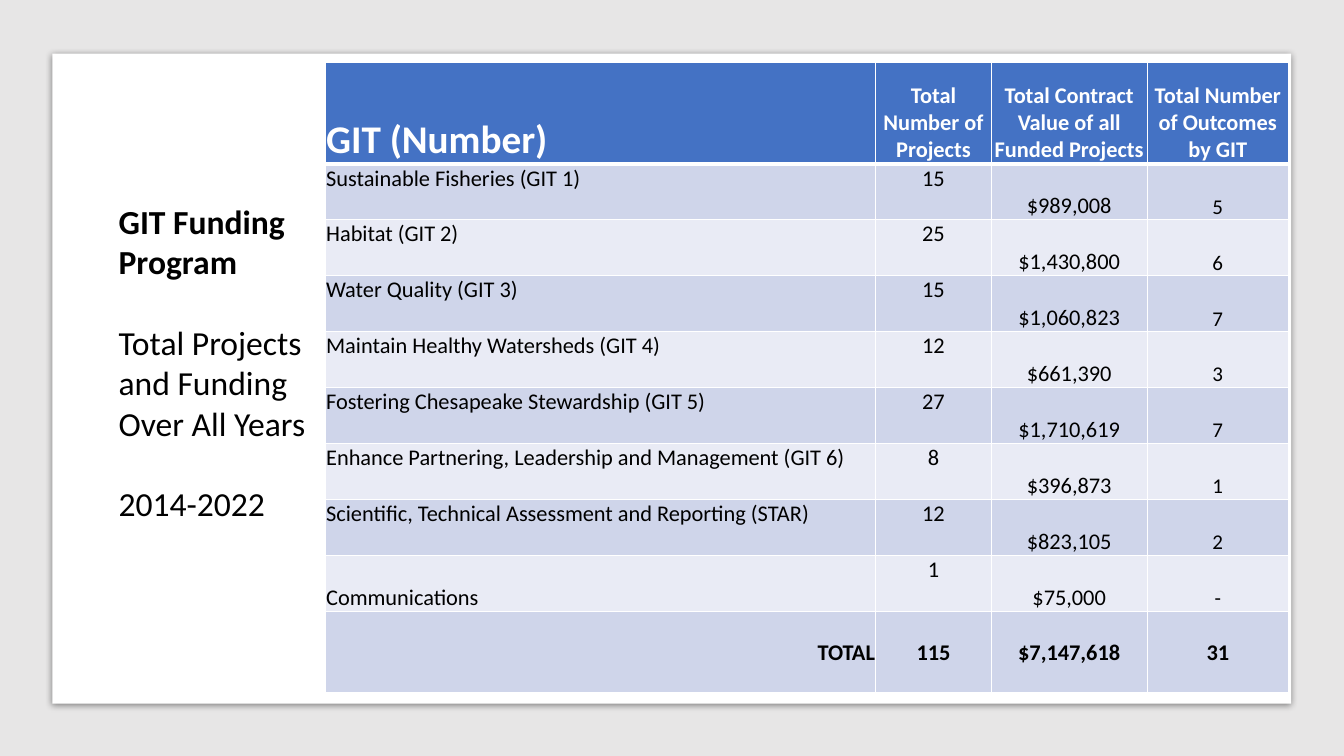
import pptx
import pptx.dml.color
import pptx.enum.shapes
import pptx.enum.text
import pptx.oxml
import pptx.oxml.ns
import pptx.util

Cm, Pt = pptx.util.Cm, pptx.util.Pt
ALIGN = pptx.enum.text.PP_ALIGN
ANCHOR = pptx.enum.text.MSO_ANCHOR

COLORS = {
    "background": "9DC3E6",
    "backdrop": "E7E6E6",
    "white": "FFFFFF",
    "black": "000000",
    "header": "4472C4",
    "band_dark": "CFD5EA",
    "band_light": "E9EBF5",
}
COL_WIDTHS = [13.87, 2.91, 3.93, 3.56]
ROW_HEIGHTS = [2.55] + [1.41] * 8 + [2.05]
HEADERS = ["GIT (Number)", "Total Number of Projects",
           "Total Contract Value of all Funded Projects",
           "Total Number of Outcomes by GIT"]
ROWS = [
    ["Sustainable Fisheries (GIT 1)", "15", "$989,008", "5"],
    ["Habitat (GIT 2)", "25", "$1,430,800", "6"],
    ["Water Quality (GIT 3)", "15", "$1,060,823", "7"],
    ["Maintain Healthy Watersheds (GIT 4)", "12", "$661,390", "3"],
    ["Fostering Chesapeake Stewardship (GIT 5)", "27", "$1,710,619", "7"],
    ["Enhance Partnering, Leadership and Management (GIT 6)", "8", "$396,873", "1"],
    ["Scientific, Technical Assessment and Reporting (STAR)", "12", "$823,105", "2"],
    ["Communications", "1", "$75,000", "-"],
]
TOTALS = ["TOTAL", "115", "$7,147,618", "31"]


class SlideBuilder:
    """Holds the shared style and the slide being filled."""

    font = "Calibri"
    nsdecls = pptx.oxml.ns.nsdecls("a")

    def __init__(self, s):
        self.s = s

    def fill(self, target, color):
        target.fill.solid()
        target.fill.fore_color.rgb = pptx.dml.color.RGBColor.from_string(COLORS[color])

    def style(self, p, size, color="black", bold=False, align=ALIGN.LEFT):
        p.alignment = align
        p.font.name, p.font.size, p.font.bold = self.font, Pt(size), bold
        p.font.color.rgb = pptx.dml.color.RGBColor.from_string(COLORS[color])

    def panel(self, x, y, w, h, color, shadow=False):
        sp = self.s.shapes.add_shape(pptx.enum.shapes.MSO_SHAPE.RECTANGLE,
                                     Cm(x), Cm(y), Cm(w), Cm(h))
        self.fill(sp, color)
        sp.line.fill.background()
        sp.shadow.inherit = False
        if shadow:
            effects = sp.element.spPr.find(pptx.oxml.ns.qn("a:effectLst"))
            effects.append(pptx.oxml.parse_xml(
                f'<a:outerShdw {self.nsdecls} blurRad="{Pt(5)}" dist="{Pt(1.4)}" '
                f'dir="5400000" rotWithShape="0"><a:srgbClr val="{COLORS["black"]}">'
                '<a:alpha val="43000"/></a:srgbClr></a:outerShdw>'))

    def text(self, x, y, w, h, lines, size, gap):
        tf = self.s.shapes.add_textbox(Cm(x), Cm(y), Cm(w), Cm(h)).text_frame
        tf.word_wrap = True
        for i, (line, bold) in enumerate(lines):
            p = tf.add_paragraph() if i else tf.paragraphs[0]
            p.text = line
            p.space_before = Pt(gap if i else 0)
            self.style(p, size, bold=bold)

    def table(self, x, y, widths, heights):
        frame = self.s.shapes.add_table(len(heights), len(widths), Cm(x), Cm(y),
                                        Cm(sum(widths)), Cm(sum(heights)))
        table = frame.table
        for column, width in zip(table.columns, widths):
            column.width = Cm(width)
        for row, height in zip(table.rows, heights):
            row.height = Cm(height)
        return table

    def cell(self, cell, text, fill, anchor, bottom_line=1, **style):
        cell.margin_left = cell.margin_right = cell.margin_top = Cm(0.02)
        cell.margin_bottom = 0
        cell.vertical_anchor = anchor
        p = cell.text_frame.paragraphs[0]
        p.text = text
        self.style(p, **style)
        tcPr = cell._tc.get_or_add_tcPr()
        for side, width in zip("LRTB", (1, 1, 1, bottom_line)):
            tcPr.append(pptx.oxml.parse_xml(
                f'<a:ln{side} {self.nsdecls} w="{Pt(width)}"><a:solidFill>'
                f'<a:srgbClr val="{COLORS["white"]}"/></a:solidFill></a:ln{side}>'))
        self.fill(cell, fill)


def main():
    prs = pptx.Presentation()
    prs.slide_width, prs.slide_height = Cm(33.87), Cm(19.05)
    s = prs.slides.add_slide(prs.slide_layouts[6])
    b = SlideBuilder(s)

    # Backdrop and white card
    b.fill(s.background, "background")
    b.panel(0, 0, 33.87, 19.05, "backdrop")
    b.panel(1.32, 1.35, 31.22, 16.38, "white", shadow=True)

    # Table header
    table = b.table(8.2, 1.58, COL_WIDTHS, ROW_HEIGHTS)
    for c, text in enumerate(HEADERS):
        b.cell(table.cell(0, c), text, "header", ANCHOR.BOTTOM, bottom_line=3,
               size=16 if c else 28, color="white", bold=True,
               align=ALIGN.CENTER if c else ALIGN.LEFT)

    # Banded project rows
    for r, row in enumerate(ROWS, start=1):
        name_anchor = ANCHOR.BOTTOM if row is ROWS[-1] else ANCHOR.TOP
        anchors = [name_anchor, ANCHOR.TOP, ANCHOR.BOTTOM, ANCHOR.BOTTOM]
        for c, (text, anchor) in enumerate(zip(row, anchors)):
            b.cell(table.cell(r, c), text, "band_dark" if r % 2 else "band_light",
                   anchor, size=15 if c == 3 else 16,
                   align=ALIGN.CENTER if c else ALIGN.LEFT)

    # Totals
    for c, text in enumerate(TOTALS):
        b.cell(table.cell(len(ROWS) + 1, c), text, "band_dark", ANCHOR.MIDDLE,
               size=16, bold=True, align=ALIGN.CENTER if c else ALIGN.RIGHT)

    # Side title
    b.text(2.74, 4.93, 5.94, 8.46,
           [("GIT Funding Program", True),
            ("Total Projects and Funding Over All Years", False),
            ("2014-2022", False)], size=24, gap=29)

    prs.save("out.pptx")


if __name__ == "__main__":
    main()
